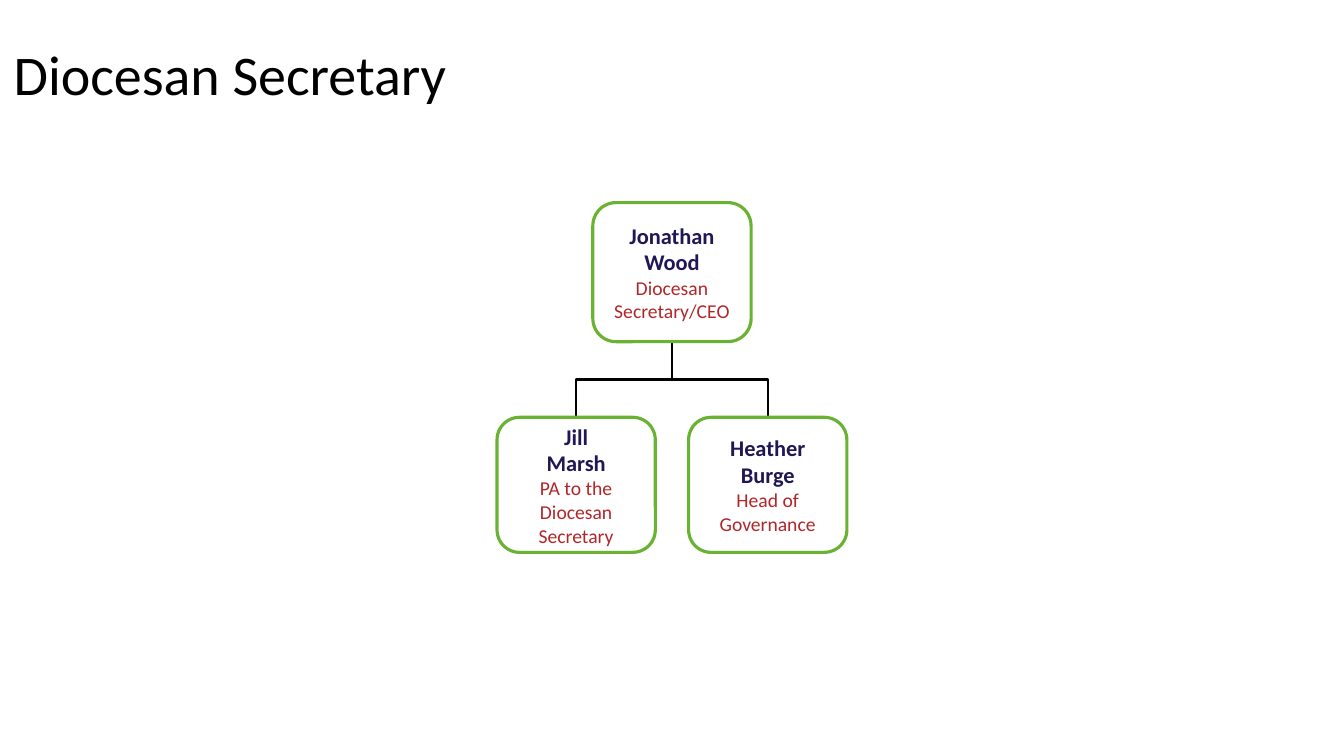
import pptx
import pptx.util
import pptx.dml.color
import pptx.enum.shapes
import pptx.enum.text
import lxml.etree

Inches, Pt = pptx.util.Inches, pptx.util.Pt
PP_ALIGN, MSO_ANCHOR = pptx.enum.text.PP_ALIGN, pptx.enum.text.MSO_ANCHOR

# Content
TITLE = "Diocesan Secretary"
HEAD = ("Jonathan", "Wood", "Diocesan Secretary/CEO")
REPORTS = [
    ("Jill", "Marsh", "PA to the Diocesan Secretary"),
    ("Heather", "Burge", "Head of Governance"),
]

# Layout in inches
SLIDE_W, SLIDE_H = 13.33, 7.5
CENTER = SLIDE_W / 2
CARD_W, HEAD_H, REPORT_H = 1.57, 1.38, 1.34
PITCH = 1.9
HEAD_TOP, REPORT_TOP = 2.01, 4.14
HEAD_BOTTOM = HEAD_TOP + HEAD_H

FONT = "Calibri"
BLACK, GREEN, NAVY, RED = "000000", "6AB232", "1F1855", "B12729"


def rgb(value):
    return pptx.dml.color.RGBColor.from_string(value)


def style(p, size, color, bold=False):
    p.alignment = PP_ALIGN.CENTER
    p.font.name, p.font.size, p.font.bold = FONT, Pt(size), bold
    p.font.color.rgb = rgb(color)


def add_link(s, x):
    """Elbow from the top of a report up to the head, bending halfway."""
    # The frame is turned a quarter so that the end legs run vertically.
    side = 1 if x < CENTER else -1
    half_w, half_h = (REPORT_TOP - HEAD_BOTTOM) / 2, abs(x - CENTER) / 2
    cx, cy = (x + CENTER) / 2, (REPORT_TOP + HEAD_BOTTOM) / 2
    link = s.shapes.add_connector(
        pptx.enum.shapes.MSO_CONNECTOR.ELBOW,
        Inches(cx + side * half_w), Inches(cy + half_h),
        Inches(cx - side * half_w), Inches(cy - half_h))
    sp_pr = link._element.spPr
    sp_pr.xfrm.set("rot", str(side * 90 % 360 * 60000))
    link.line.color.rgb = rgb(BLACK)
    link.line.width = Pt(1.5)
    lxml.etree.SubElement(sp_pr, pptx.oxml.ns.qn("a:effectLst"))


def add_card(s, x, top, height, person):
    card = s.shapes.add_shape(
        pptx.enum.shapes.MSO_SHAPE.FLOWCHART_ALTERNATE_PROCESS,
        Inches(x - CARD_W / 2), Inches(top), Inches(CARD_W), Inches(height))
    card.shadow.inherit = False
    card.fill.background()
    card.line.color.rgb = rgb(GREEN)
    card.line.width = Pt(2.25)
    tf = card.text_frame
    tf.word_wrap = True
    tf.vertical_anchor = MSO_ANCHOR.MIDDLE
    tf.margin_left = tf.margin_right = tf.margin_top = tf.margin_bottom = 0
    tf.text = "\n".join(person)
    first, last, role = tf.paragraphs
    style(first, 16, NAVY, True)
    style(last, 16, NAVY, True)
    style(role, 14, RED)


def main():
    prs = pptx.Presentation()
    prs.slide_width, prs.slide_height = Inches(SLIDE_W), Inches(SLIDE_H)
    s = prs.slides.add_slide(prs.slide_layouts[5])

    # Title
    title = s.shapes.title
    title.left, title.top = Inches(0.02), Inches(0.34)
    title.width, title.height = Inches(4.52), Inches(0.77)
    tf = title.text_frame
    tf.text = TITLE
    tf.word_wrap = False
    tf.auto_size = pptx.enum.text.MSO_AUTO_SIZE.SHAPE_TO_FIT_TEXT
    tf.vertical_anchor = MSO_ANCHOR.TOP
    style(tf.paragraphs[0], 40, BLACK)

    # Organisation chart
    for i, person in enumerate(REPORTS):
        x = CENTER + (i - (len(REPORTS) - 1) / 2) * PITCH
        add_link(s, x)
        add_card(s, x, REPORT_TOP, REPORT_H, person)
    add_card(s, CENTER, HEAD_TOP, HEAD_H, HEAD)

    prs.save("out.pptx")


if __name__ == "__main__":
    main()
